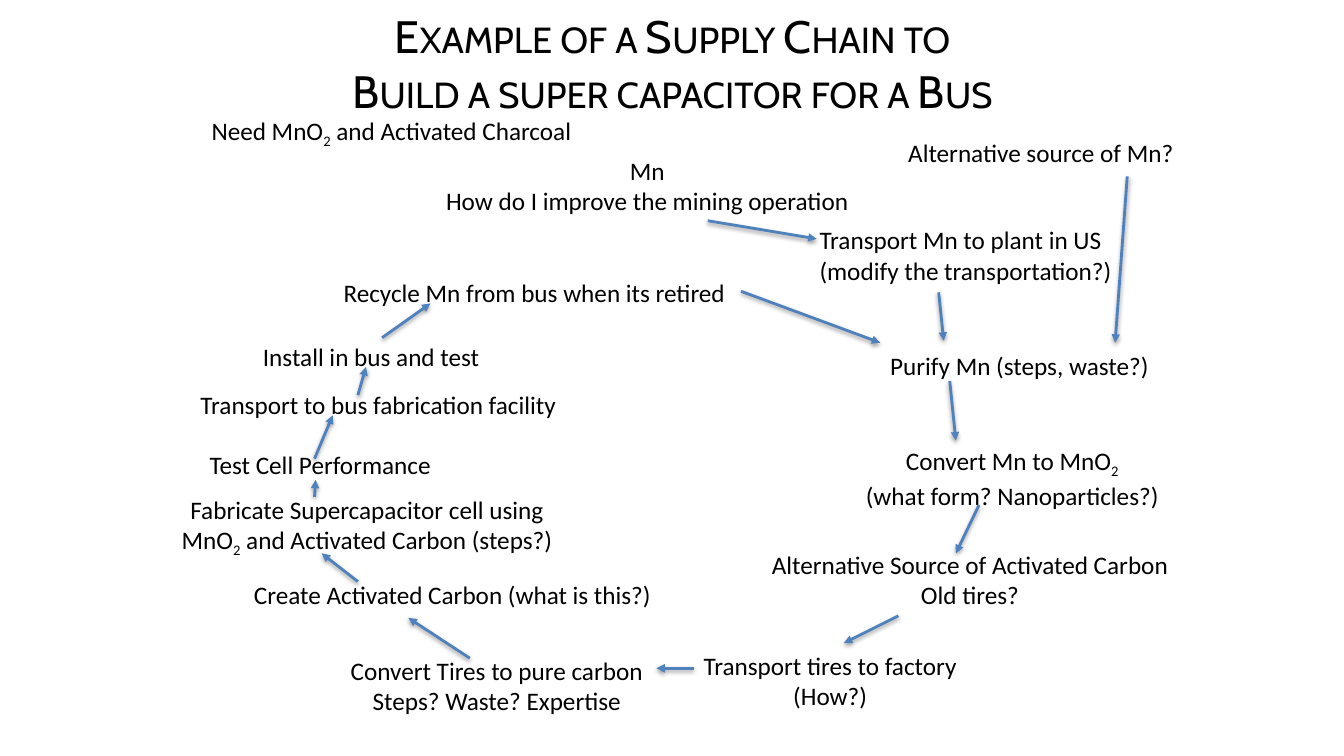
"""Builds a slide showing the supply chain of a bus supercapacitor."""
from lxml import etree
from pptx import Presentation
from pptx import util as u
from pptx.dml.color import RGBColor
from pptx.enum import shapes, text
from pptx.oxml import parse_xml
from pptx.oxml.ns import nsdecls, qn

BLACK = RGBColor(0x00, 0x00, 0x00)
BLUE = RGBColor(0x4F, 0x81, 0xBD)
LEFT, CENTER = text.PP_ALIGN.LEFT, text.PP_ALIGN.CENTER
SHADOW = (
    f'<a:effectLst {nsdecls("a")}><a:outerShdw blurRad="40000" dist="20000" '
    'dir="5400000" rotWithShape="0"><a:srgbClr val="000000">'
    '<a:alpha val="38000"/></a:srgbClr></a:outerShdw></a:effectLst>'
)
STEP_FONT = {"name": "Calibri", "size": u.Pt(18)}
TITLE_FONT = {"name": "Cabin", "size": u.Pt(32.4)}


def format_font(font, values):
    for key, value in values.items():
        setattr(font, key, value)
    font.color.rgb = BLACK


deck = Presentation()
deck.slide_width, deck.slide_height = u.Inches(13.33), u.Inches(7.5)
slide = deck.slides.add_slide(deck.slide_layouts[5])

heading = slide.shapes.title
bounds = {"left": 0.67, "top": 0, "width": 12, "height": 1.25}
for side, inches in bounds.items():
    setattr(heading, side, u.Inches(inches))
heading.text_frame.auto_size = text.MSO_AUTO_SIZE.NONE
heading.text_frame.vertical_anchor = text.MSO_ANCHOR.MIDDLE
heading_line = heading.text_frame.paragraphs[0]
heading_line.text = "Example of a Supply Chain to\vBuild a super capacitor for a Bus"
heading_line.alignment = CENTER
for run in heading_line.runs:
    format_font(run.font, TITLE_FONT)
    run.font._element.set("cap", "small")

# Text between bars is subscript
steps = [
    (2, 1.09, 3.87, [("Need MnO|2| and Activated Charcoal", LEFT)]),
    (4.25, 1.49, 4.34, [("Mn", CENTER),
                        ("How do I improve the mining operation", CENTER)]),
    (8.03, 2.18, 3.13, [("Transport Mn to plant in US", LEFT),
                        ("(modify the transportation?)", LEFT)]),
    (8.73, 3.43, 2.81, [("Purify Mn (steps, waste?)", LEFT)]),
    (8.91, 1.31, 2.86, [("Alternative source of Mn?", LEFT)]),
    (8.47, 4.37, 3.14, [("Convert Mn to MnO|2|", CENTER),
                        ("(what form? Nanoparticles?)", CENTER)]),
    (7.53, 5.4, 4.18, [("Alternative Source of Activated Carbon", CENTER),
                       ("Old tires?", CENTER)]),
    (6.88, 6.4, 2.74, [("Transport tires to factory", LEFT), ("(How?)", CENTER)]),
    (3.38, 6.45, 3.14, [("Convert Tires to pure carbon", LEFT),
                        ("Steps? Waste? Expertise", CENTER)]),
    (2.42, 5.7, 4.19, [("Create Activated Carbon (what is this?)", LEFT)]),
    (1.67, 4.85, 3.94, [("Fabricate Supercapacitor cell using", CENTER),
                        ("MnO|2| and Activated Carbon (steps?)", CENTER)]),
    (1.98, 4.41, 2.42, [("Test Cell Performance", LEFT)]),
    (1.89, 3.81, 3.77, [("Transport to bus fabrication facility", LEFT)]),
    (2.51, 3.34, 2.37, [("Install in bus and test", LEFT)]),
    (3.31, 2.7, 4.03, [("Recycle Mn from bus when its retired", LEFT)]),
]
for left, top, width, lines in steps:
    height = 0.4 + 0.31 * (len(lines) - 1)
    step = slide.shapes.add_textbox(*map(u.Inches, (left, top, width, height)))
    step.text_frame.word_wrap = False
    step.text_frame.auto_size = text.MSO_AUTO_SIZE.SHAPE_TO_FIT_TEXT
    for row, (wording, alignment) in enumerate(lines):
        frame = step.text_frame
        line = frame.add_paragraph() if row else frame.paragraphs[0]
        line.alignment = alignment
        for index, part in enumerate(wording.split("|")):
            if part:
                run = line.add_run()
                run.text = part
                format_font(run.font, STEP_FONT)
                if index % 2:
                    run.font._element.set("baseline", "-25000")

flows = [
    (7.02, 2.19, 8.1, 2.37),
    (9.31, 2.9, 9.36, 3.38),
    (11.18, 1.75, 11.06, 3.4),
    (9.42, 3.78, 9.48, 4.37),
    (9.71, 5.01, 9.48, 5.49),
    (8.91, 6.11, 8.37, 6.38),
    (6.88, 6.63, 6.51, 6.63),
    (4.66, 6.53, 4.05, 6.13),
    (3.55, 5.77, 3.19, 5.49),
    (3.12, 4.93, 3.13, 4.76),
    (3.12, 4.55, 3.3, 4.12),
    (3.55, 3.92, 3.63, 3.64),
    (3.79, 3.35, 4.27, 3.01),
    (7.35, 2.89, 8.73, 3.4),
]
for ends in flows:
    flow = slide.shapes.add_connector(
        shapes.MSO_CONNECTOR.STRAIGHT, *map(u.Inches, ends))
    flow.line.color.rgb = BLUE
    flow.line.width = u.Pt(2)
    properties = flow._element.spPr
    etree.SubElement(properties.find(qn("a:ln")), qn("a:tailEnd"), type="triangle")
    properties.append(parse_xml(SHADOW))

deck.save("out.pptx")
